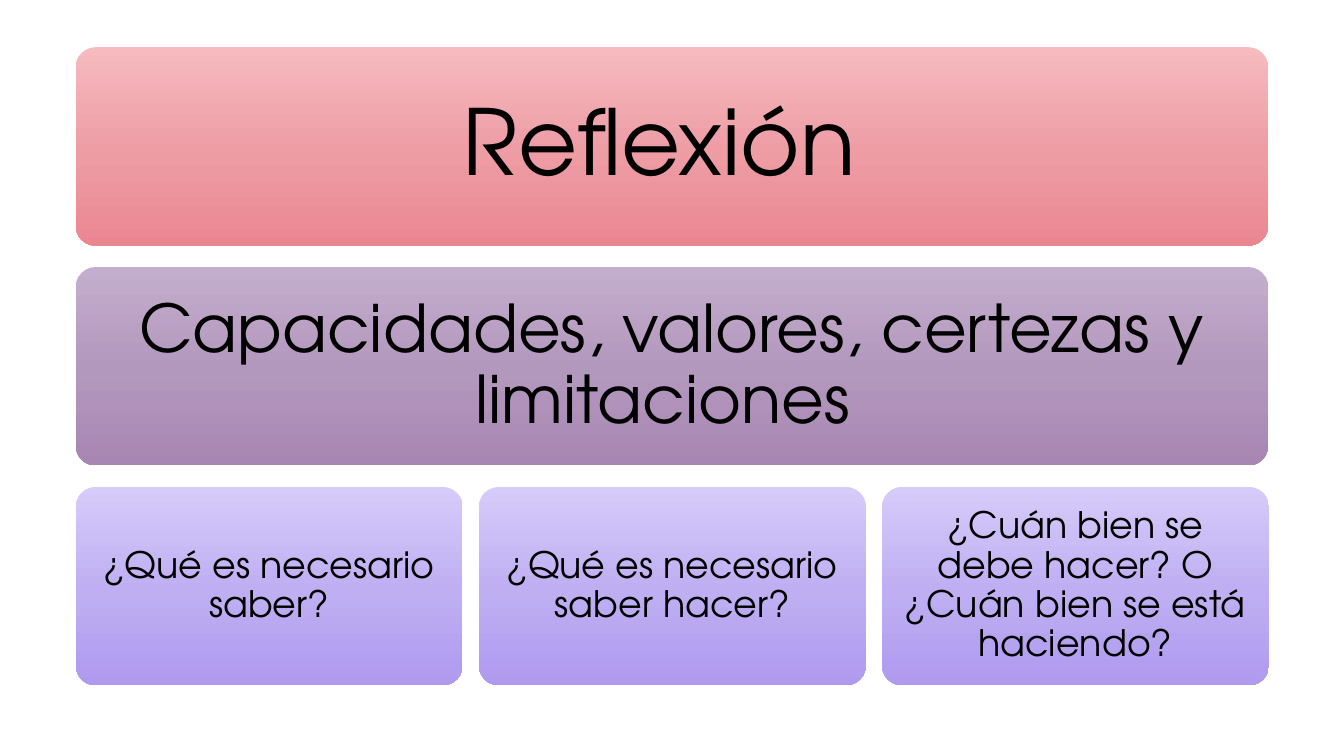
"""Build a slide with three tiers of rounded cards about reflection."""
import copy
from dataclasses import dataclass

import pptx
import pptx.dml.color
import pptx.enum.shapes
import pptx.enum.text
import pptx.shapes.autoshape
import pptx.slide
import pptx.util

Cm = pptx.util.Cm
RGBColor = pptx.dml.color.RGBColor

BLACK = RGBColor(0x00, 0x00, 0x00)
PINK = (RGBColor(0xF6, 0xBA, 0xBF), RGBColor(0xEE, 0x9D, 0xA5), RGBColor(0xEB, 0x86, 0x91))
PURPLE = (RGBColor(0xC4, 0xAE, 0xCD), RGBColor(0xB3, 0x98, 0xBD), RGBColor(0xA7, 0x86, 0xB3))
LAVENDER = (RGBColor(0xD6, 0xCB, 0xF9), RGBColor(0xBF, 0xAF, 0xF2), RGBColor(0xAF, 0x9A, 0xEF))
GRADIENT_POSITIONS = (0, 0.52, 1)

LEFT, TOP = 1.91, 1.19
ROW_PITCH, COLUMN_PITCH = 5.54, 10.16
FULL_WIDTH, COLUMN_WIDTH, CARD_HEIGHT = 30.05, 9.75, 5.0
CORNER_INSET = 0.15


@dataclass(frozen=True)
class Card:
    """A rounded card; lengths are in centimetres and the text size in points."""

    text: str
    row: int
    column: int
    width: float
    colors: tuple[RGBColor, RGBColor, RGBColor]
    size: int
    margin: float
    is_title: bool = False

    @property
    def left(self) -> float:
        """Return the left edge of the card."""
        return LEFT + self.column * COLUMN_PITCH

    @property
    def top(self) -> float:
        """Return the top edge of the card."""
        return TOP + self.row * ROW_PITCH


QUESTIONS = (
    "¿Qué es necesario saber?",
    "¿Qué es necesario saber hacer?",
    "¿Cuán bien se debe hacer? O ¿Cuán bien se está haciendo?",
)
CARDS = (
    Card("Reflexión ", 0, 0, FULL_WIDTH, PINK, 65, 0.69, is_title=True),
    Card("Capacidades, valores, certezas y limitaciones ", 1, 0, FULL_WIDTH, PURPLE, 47, 0.51),
    *(
        Card(question, 2, column, COLUMN_WIDTH, LAVENDER, 26, 0.28)
        for column, question in enumerate(QUESTIONS)
    ),
)


def set_attributes(target: object, values: dict[str, object]) -> None:
    """Set every named attribute on the target."""
    for name, value in values.items():
        setattr(target, name, value)


def fill_gradient(shape: pptx.shapes.autoshape.Shape, colors: tuple[RGBColor, ...]) -> None:
    """Fill the shape with a three-stop gradient running downwards."""
    shape.fill.gradient()
    shape.fill.gradient_angle = 270
    stop_list = shape.element.xpath(".//a:gsLst")[0]
    stop_list.append(copy.deepcopy(stop_list[0]))
    for stop, position, color in zip(shape.fill.gradient_stops, GRADIENT_POSITIONS, colors):
        stop.position = position
        stop.color.rgb = color


def write_text(shape: pptx.shapes.autoshape.Shape, card: Card) -> None:
    """Write the card's text into the shape."""
    text_frame = shape.text_frame
    text_frame.text = card.text
    margins = {f"margin_{side}": Cm(card.margin) for side in ("left", "top", "right", "bottom")}
    set_attributes(text_frame, {
        "word_wrap": True,
        "auto_size": pptx.enum.text.MSO_AUTO_SIZE.NONE,
        "vertical_anchor": pptx.enum.text.MSO_ANCHOR.MIDDLE,
        **margins,
    })
    paragraph = text_frame.paragraphs[0]
    set_attributes(paragraph, {
        "alignment": pptx.enum.text.PP_ALIGN.CENTER,
        "line_spacing": 0.9,
    })
    font = paragraph.runs[0].font
    set_attributes(font, {"name": "TeX Gyre Adventor", "size": pptx.util.Pt(card.size)})
    font.color.rgb = BLACK


def draw_card(slide: pptx.slide.Slide, card: Card) -> None:
    """Draw one card, using the title placeholder for the title's text."""
    shape = slide.shapes.add_shape(
        pptx.enum.shapes.MSO_SHAPE.ROUNDED_RECTANGLE,
        Cm(card.left), Cm(card.top), Cm(card.width), Cm(CARD_HEIGHT),
    )
    shape.adjustments[0] = 0.1
    shape.shadow.inherit = False
    shape.line.fill.background()
    fill_gradient(shape, card.colors)
    if card.is_title:
        title = slide.shapes.title
        set_attributes(title, {
            "left": Cm(card.left + CORNER_INSET),
            "top": Cm(card.top + CORNER_INSET),
            "width": Cm(card.width - 2 * CORNER_INSET),
            "height": Cm(CARD_HEIGHT - 2 * CORNER_INSET),
        })
        shape.element.addnext(title.element)
        shape = title
    write_text(shape, card)


def main() -> None:
    """Build and save the presentation."""
    presentation = pptx.Presentation()
    set_attributes(presentation, {"slide_width": Cm(33.87), "slide_height": Cm(19.05)})
    slide = presentation.slides.add_slide(presentation.slide_layouts.get_by_name("Title Only"))
    for card in CARDS:
        draw_card(slide, card)
    presentation.save("out.pptx")


if __name__ == "__main__":
    main()
